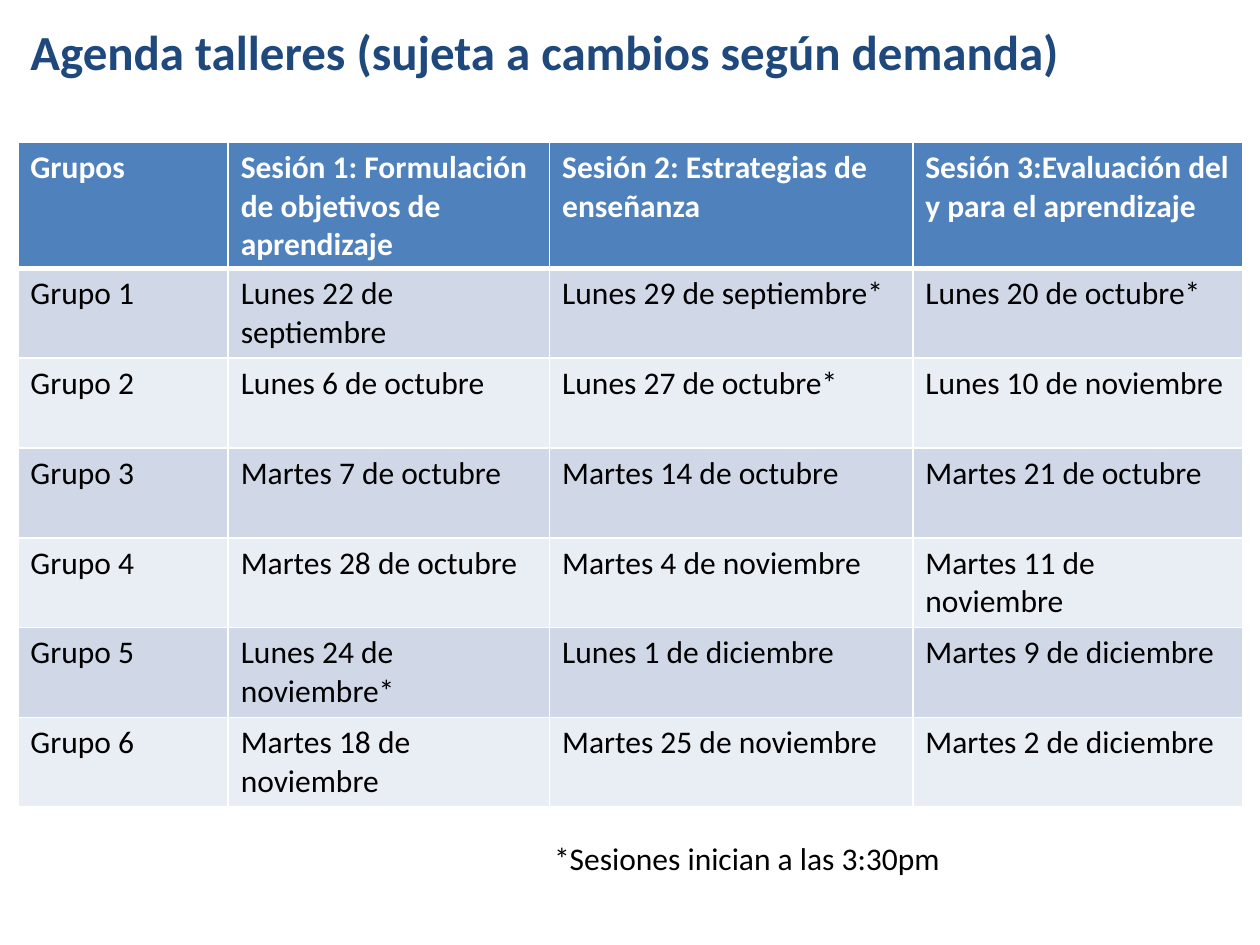
from lxml.etree import SubElement as Sub
from pptx import Presentation
from pptx.dml.color import RGBColor as Rgb
from pptx.enum.text import MSO_ANCHOR as Anchor, MSO_AUTO_SIZE as Auto, PP_ALIGN as Align
from pptx.oxml.ns import qn
from pptx.util import Cm, Pt

HUES = {"title": "1F497D", "head": "4F81BD", "odd": "D0D8E8",
        "even": "E9EDF4", "white": "FFFFFF", "ink": "000000"}
TITLE = "Agenda talleres (sujeta a cambios según demanda)"
NOTE = "*Sesiones inician a las 3:30pm"
ROWS = [
    ("Grupos", "Sesión 1: Formulación de objetivos de aprendizaje",
     "Sesión 2: Estrategias de enseñanza", "Sesión 3:Evaluación del y para el aprendizaje"),
    ("Grupo 1", "Lunes 22 de septiembre", "Lunes 29 de septiembre*", "Lunes 20 de octubre*"),
    ("Grupo 2", "Lunes 6 de octubre", "Lunes 27 de octubre*", "Lunes 10 de noviembre"),
    ("Grupo 3", "Martes 7 de octubre", "Martes 14 de octubre", "Martes 21 de octubre"),
    ("Grupo 4", "Martes 28 de octubre", "Martes 4 de noviembre", "Martes 11 de noviembre"),
    ("Grupo 5", "Lunes 24 de noviembre*", "Lunes 1 de diciembre", "Martes 9 de diciembre"),
    ("Grupo 6", "Martes 18 de noviembre", "Martes 25 de noviembre", "Martes 2 de diciembre"),
]
WIDTHS = [4.24, 6.48, 7.32, 6.66]
HEAD, ROW = 2.54, 1.81


def write(frame, text, hue, size=18, bold=False):
    frame.text = text
    para = frame.paragraphs[0]
    para.alignment = Align.LEFT
    font = para.runs[0].font
    for key, val in {"name": "Calibri", "size": Pt(size), "bold": bold}.items():
        setattr(font, key, val)
    font.color.rgb = Rgb.from_string(HUES[hue])


def fit(frame):
    for key, val in {"word_wrap": True, "auto_size": Auto.SHAPE_TO_FIT_TEXT,
                     "vertical_anchor": Anchor.TOP}.items():
        setattr(frame, key, val)


def edge(cell, side, width):
    line = Sub(cell._tc.get_or_add_tcPr(), qn(f"a:ln{side}"), w=str(Pt(width)))
    fill = Sub(line, qn("a:solidFill"))
    Sub(fill, qn("a:srgbClr"), val=HUES["white"])


def add_title(slide, box):
    title = slide.shapes.title
    for key, val in zip(("left", "top", "width", "height"), box):
        setattr(title, key, Cm(val))
    fit(title.text_frame)
    write(title.text_frame, TITLE, "title", 28, True)


def add_agenda(slide, left, top):
    high = HEAD + ROW * (len(ROWS) - 1)
    box = [Cm(val) for val in (left, top, sum(WIDTHS), high)]
    table = slide.shapes.add_table(len(ROWS), len(WIDTHS), *box).table
    for col, width in zip(table.columns, WIDTHS):
        col.width = Cm(width)
    for i, texts in enumerate(ROWS):
        head = i == 0
        table.rows[i].height = Cm(HEAD if head else ROW)
        fill = "head" if head else "odd" if i % 2 else "even"
        # The rule under the header is thicker than the rest
        sides = {"L": 1, "R": 1, "T": 3 if i == 1 else 1, "B": 3 if head else 1}
        for j, text in enumerate(texts):
            cell = table.cell(i, j)
            for side, width in sides.items():
                edge(cell, side, width)
            cell.fill.solid()
            cell.fill.fore_color.rgb = Rgb.from_string(HUES[fill])
            write(cell.text_frame, text, "white" if head else "ink", bold=head)


def add_note(slide, box):
    frame = slide.shapes.add_textbox(*[Cm(val) for val in box]).text_frame
    fit(frame)
    write(frame, NOTE, "ink")


def main():
    deck = Presentation()
    deck.slide_width, deck.slide_height = Cm(25.4), Cm(19.05)
    slide = deck.slides.add_slide(deck.slide_layouts[5])
    # Title, agenda table, footnote
    add_title(slide, (0.36, 0.3, 22.99, 1.45))
    add_agenda(slide, 0.36, 2.87)
    add_note(slide, (10.92, 16.79, 11.02, 1.02))
    deck.save("out.pptx")


if __name__ == "__main__":
    main()
